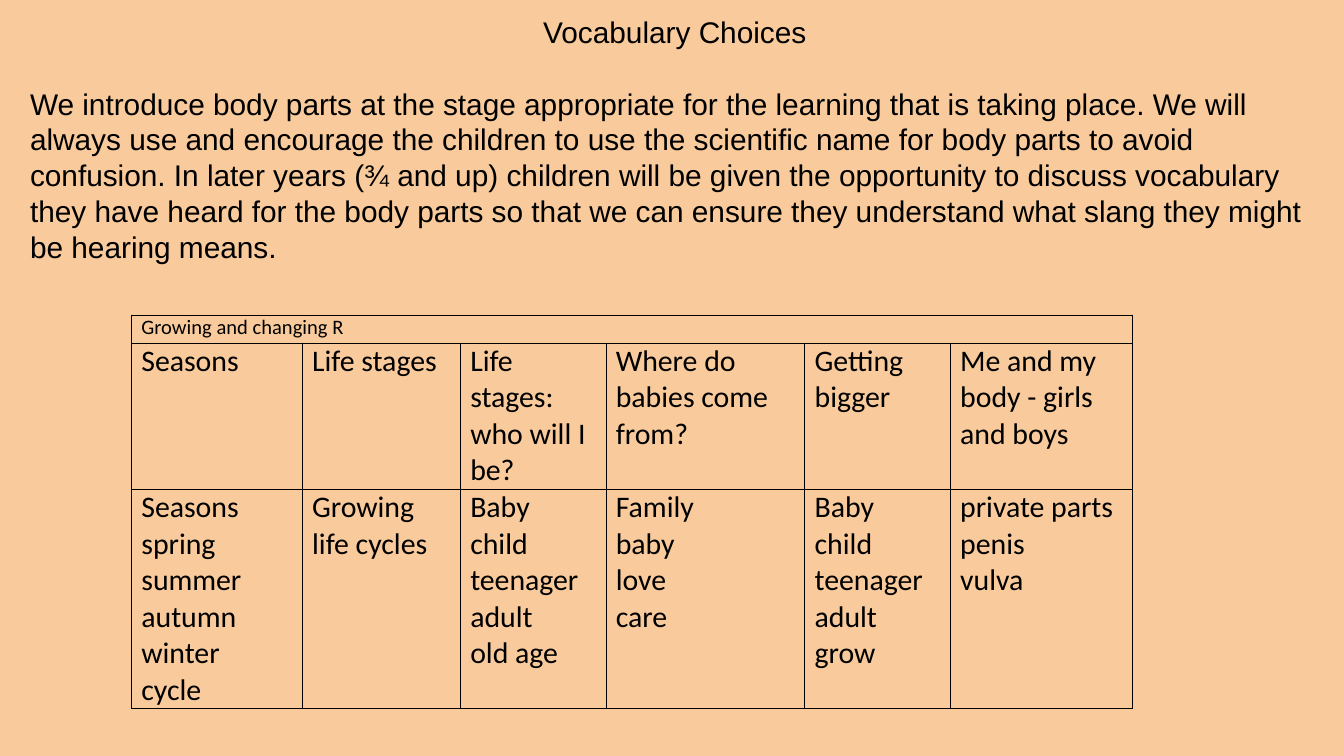
from lxml.etree import SubElement
from pptx import Presentation
from pptx.dml.color import RGBColor
from pptx.enum.text import MSO_AUTO_SIZE, PP_ALIGN
from pptx.oxml.ns import qn
from pptx.util import Pt

PX = 9525
PEACH = RGBColor(0xF9, 0xCB, 0x9C)
BLACK = RGBColor(0x00, 0x00, 0x00)

TITLE = "Vocabulary Choices"
BODY = (
    "We introduce body parts at the stage appropriate for the learning that is taking place. "
    "We will always use and encourage the children to use the scientific name for body parts "
    "to avoid confusion. In later years (¾ and up) children will be given the opportunity to "
    "discuss vocabulary they have heard for the body parts so that we can ensure they "
    "understand what slang they might be hearing means."
)
TOPICS = [
    (122, "Seasons", "Seasons\nspring\nsummer\nautumn\nwinter\ncycle"),
    (113, "Life stages", "Growing\nlife cycles"),
    (104, "Life stages: who will I be?", "Baby\nchild\nteenager\nadult\nold age"),
    (142, "Where do babies come from?", "Family\nbaby\nlove\ncare"),
    (104, "Getting bigger", "Baby\nchild\nteenager\nadult\ngrow"),
    (130, "Me and my body - girls and boys", "private parts\npenis\nvulva"),
]
ROW_HEIGHTS = [20, 86, 20]


def style_text(frame, font_name, size):
    for para in frame.paragraphs:
        for span in para.runs:
            span.font.name = font_name
            span.font.size = Pt(size)
            span.font.color.rgb = BLACK


def border_cell(cell):
    properties = cell._tc.get_or_add_tcPr()
    for position, side in enumerate(("a:lnL", "a:lnR", "a:lnT", "a:lnB")):
        line = SubElement(properties, qn(side), w=str(Pt(0.5)))
        fill = SubElement(line, qn("a:solidFill"))
        SubElement(fill, qn("a:srgbClr"), val=str(BLACK))
        properties.insert(position, line)


deck = Presentation()
deck.slide_width = 960 * PX
deck.slide_height = 540 * PX
page = deck.slides.add_slide(deck.slide_layouts[6])
page.background.fill.solid()
page.background.fill.fore_color.rgb = PEACH

table_width = sum(width for width, heading, words in TOPICS)
table = page.shapes.add_table(
    len(ROW_HEIGHTS), len(TOPICS), 94 * PX, 225 * PX, table_width * PX, sum(ROW_HEIGHTS) * PX
).table
table.first_row = False
table.horz_banding = False
for row, height in zip(table.rows, ROW_HEIGHTS):
    row.height = height * PX

table.cell(0, 0).merge(table.cell(0, len(TOPICS) - 1))
table.cell(0, 0).text_frame.text = "Growing and changing R"
for index, (width, heading, words) in enumerate(TOPICS):
    table.columns[index].width = width * PX
    table.cell(1, index).text_frame.text = heading
    table.cell(2, index).text_frame.text = words

for row, size in zip(table.rows, (11, 16, 16)):
    for cell in row.cells:
        cell.margin_left = cell.margin_right = 7 * PX
        cell.margin_top = cell.margin_bottom = 0
        cell.fill.background()
        border_cell(cell)
        style_text(cell.text_frame, "Calibri", size)

box = page.shapes.add_textbox(12 * PX, 0, 940 * PX, 201 * PX)
frame = box.text_frame
frame.word_wrap = True
frame.auto_size = MSO_AUTO_SIZE.SHAPE_TO_FIT_TEXT
frame.margin_top = frame.margin_bottom = 10 * PX
frame.text = f"{TITLE}\n{BODY}"
frame.paragraphs[0].alignment = PP_ALIGN.CENTER
frame.paragraphs[0].space_after = Pt(19)
style_text(frame, "Arial", 16)

deck.save("out.pptx")
